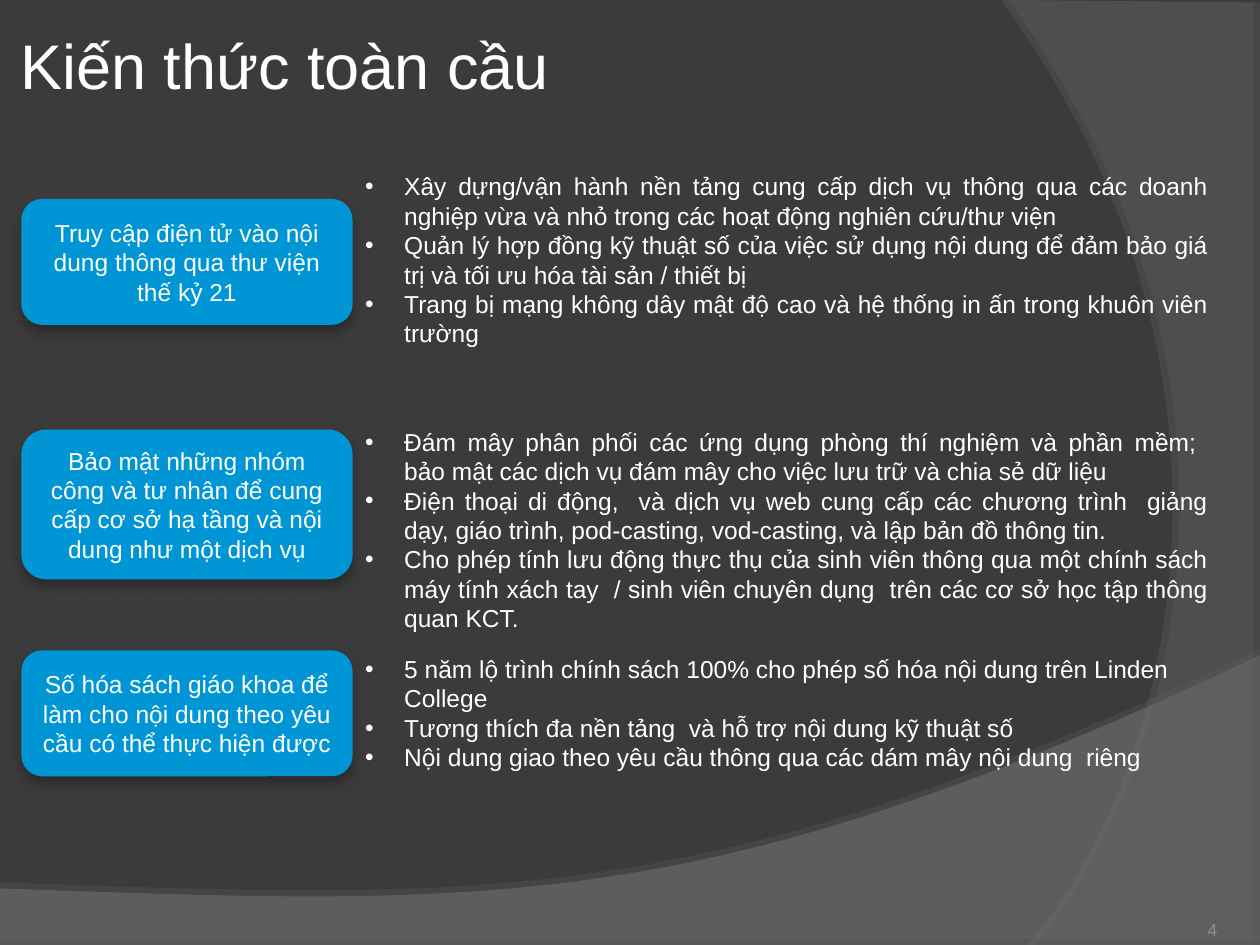
from lxml.etree import SubElement
from pptx import Presentation
from pptx.dml.color import RGBColor
from pptx.enum.shapes import MSO_SHAPE
from pptx.enum.text import MSO_ANCHOR, PP_ALIGN
from pptx.oxml.ns import qn
from pptx.util import Cm, Pt

CARD_LEFT, CARD_WIDTH = 0.43, 6.68
LIST_LEFT, LIST_WIDTH = CARD_LEFT + CARD_WIDTH, 17.5

# Card text, card top and height, list top and height, list alignment, list items
TOPICS = [
    ("Truy cập điện tử vào nội dung thông qua thư viện thế kỷ 21",
     4.01, 2.54, 3.33, 4.45, PP_ALIGN.JUSTIFY,
     ["Xây dựng/vận hành nền tảng cung cấp dịch vụ thông qua các doanh nghiệp vừa và nhỏ "
      "trong các hoạt động nghiên cứu/thư viện",
      "Quản lý hợp đồng kỹ thuật số của việc sử dụng nội dung để đảm bảo giá trị và tối ưu "
      "hóa tài sản / thiết bị",
      "Trang bị mạng không dây mật độ cao và hệ thống in ấn trong khuôn viên trường"]),
    ("Bảo mật những nhóm công và tư nhân để cung cấp cơ sở hạ tầng và nội dung như một dịch vụ",
     8.66, 3.02, 8.48, 5.05, PP_ALIGN.JUSTIFY,
     ["Đám mây phân phối các ứng dụng phòng thí nghiệm và phần mềm; \n"
      "bảo mật các dịch vụ đám mây cho việc lưu trữ và chia sẻ dữ liệu",
      "Điện thoại di động,  và dịch vụ web cung cấp các chương trình  giảng dạy, giáo trình, "
      "pod-casting, vod-casting, và lập bản đồ thông tin.",
      "Cho phép tính lưu động thực thụ của sinh viên thông qua một chính sách máy tính xách "
      "tay  / sinh viên chuyên dụng  trên các cơ sở học tập thông quan KCT."]),
    ("Số hóa sách giáo khoa để làm cho nội dung theo yêu cầu có thể thực hiện được",
     13.11, 2.54, 13.06, 2.64, PP_ALIGN.LEFT,
     ["5 năm lộ trình chính sách 100% cho phép số hóa nội dung trên Linden College",
      "Tương thích đa nền tảng  và hỗ trợ nội dung kỹ thuật số",
      "Nội dung giao theo yêu cầu thông qua các dám mây nội dung  riêng"]),
]


def color(hex_string):
    return RGBColor.from_string(hex_string)


def curve(start, control_1, control_2, end, steps=60):
    """Return points along a cubic Bézier curve, in the unit of its control points."""
    points = []
    for step in range(steps + 1):
        t = step / steps
        weights = ((1 - t) ** 3, 3 * t * (1 - t) ** 2, 3 * t ** 2 * (1 - t), t ** 3)
        points.append(tuple(
            sum(weight * value for weight, value in zip(weights, values))
            for values in zip(start, control_1, control_2, end)))
    return points


class SlideBuilder:
    font = "Arial"
    text_color = "FFFFFF"
    body_size = 14

    def __init__(self, slide, background):
        self.slide = slide
        fill = slide.background.fill
        fill.solid()
        fill.fore_color.rgb = color(background)

    def style(self, shape, fill, shadow, opacity=100):
        """Set a plain fill and a shadow of (colour, opacity, blur, distance, angle)."""
        shape.fill.solid()
        shape.fill.fore_color.rgb = color(fill)
        shape.line.fill.background()
        shape.shadow.inherit = False
        properties = shape._element.spPr
        if opacity < 100:
            fill_color = properties.find(qn("a:solidFill")).find(qn("a:srgbClr"))
            SubElement(fill_color, qn("a:alpha"), val=str(opacity * 1000))
        shadow_color, shadow_opacity, blur, distance, angle = shadow
        outer = SubElement(properties.find(qn("a:effectLst")), qn("a:outerShdw"),
                           blurRad=str(Pt(blur)), dist=str(Pt(distance)),
                           dir=str(angle * 60000), algn="ctr", rotWithShape="0")
        shade = SubElement(outer, qn("a:srgbClr"), val=shadow_color)
        SubElement(shade, qn("a:alpha"), val=str(shadow_opacity * 1000))

    def add_text(self, paragraph, text, size, text_color=None):
        for number, line in enumerate(text.split("\n")):
            if number:
                paragraph.add_line_break()
            run = paragraph.add_run()
            run.text = line
            run.font.name = self.font
            run.font.size = Pt(size)
            run.font.color.rgb = color(text_color or self.text_color)

    def wave(self, points, fill, opacity, shadow):
        corners = [(Cm(x), Cm(y)) for x, y in points]
        builder = self.slide.shapes.build_freeform(*corners[0])
        builder.add_line_segments(corners[1:], close=True)
        self.style(builder.convert_to_shape(), fill, shadow, opacity)

    def text_box(self, left, top, width, height, anchor=MSO_ANCHOR.TOP, inset=None):
        box = self.slide.shapes.add_textbox(Cm(left), Cm(top), Cm(width), Cm(height))
        frame = box.text_frame
        frame.word_wrap = True
        frame.vertical_anchor = anchor
        if inset is not None:
            frame.margin_left = frame.margin_right = Cm(inset)
            frame.margin_top = frame.margin_bottom = Cm(0.13)
        return frame

    def title(self, text):
        frame = self.text_box(0.28, 0.23, 23.85, 2.34, MSO_ANCHOR.MIDDLE, inset=0.13)
        paragraph = frame.paragraphs[0]
        paragraph.line_spacing = 0.9
        self.add_text(paragraph, text, 36)

    def slide_number(self, text):
        frame = self.text_box(23.88, 18.42, 0.89, 0.66, MSO_ANCHOR.BOTTOM, inset=0.23)
        paragraph = frame.paragraphs[0]
        paragraph.alignment = PP_ALIGN.RIGHT
        self.add_text(paragraph, text, 10, "8E8E95")

    def card(self, text, top, height):
        shape = self.slide.shapes.add_shape(MSO_SHAPE.ROUNDED_RECTANGLE, Cm(CARD_LEFT),
                                            Cm(top), Cm(CARD_WIDTH), Cm(height))
        self.style(shape, "0096D6", ("000000", 27, 6, 4, 90))
        frame = shape.text_frame
        frame.word_wrap = True
        frame.vertical_anchor = MSO_ANCHOR.MIDDLE
        paragraph = frame.paragraphs[0]
        paragraph.alignment = PP_ALIGN.CENTER
        self.add_text(paragraph, text, self.body_size)

    def bullet_list(self, items, top, height, alignment):
        frame = self.text_box(LIST_LEFT, top, LIST_WIDTH, height)
        for number, item in enumerate(items):
            paragraph = frame.add_paragraph() if number else frame.paragraphs[0]
            paragraph.alignment = alignment
            properties = paragraph._p.get_or_add_pPr()
            properties.set("marL", str(Cm(0.79)))
            properties.set("indent", str(-Cm(0.79)))
            SubElement(properties, qn("a:buFont"), typeface=self.font)
            SubElement(properties, qn("a:buChar"), char="•")
            self.add_text(paragraph, item, self.body_size)


def main():
    presentation = Presentation()
    presentation.slide_width = Cm(25.4)
    presentation.slide_height = Cm(19.05)
    slide = presentation.slides.add_slide(presentation.slide_layouts[6])
    builder = SlideBuilder(slide, "3B3B3B")

    bottom_edge = curve((25.4, 13.21), (14.2, 18.52), (9.93, 18.26), (0, 17.91))
    builder.wave([(0, 19.05), (25.4, 19.05)] + bottom_edge,
                 "7C7C7C", 45, ("808080", 35, 0, 3.5, 270))
    right_edge = curve((20.85, 19.05), (23.75, 15.72), (25.86, 7.62), (20.32, 0))
    builder.wave([(25.4, 0.05), (25.4, 19.05)] + right_edge,
                 "595959", 40, ("808080", 45, 0, 4, 180))

    builder.slide_number("4")
    builder.title("Kiến thức toàn cầu")
    for text, card_top, card_height, list_top, list_height, alignment, items in TOPICS:
        builder.card(text, card_top, card_height)
        builder.bullet_list(items, list_top, list_height, alignment)

    presentation.save("out.pptx")


if __name__ == "__main__":
    main()
